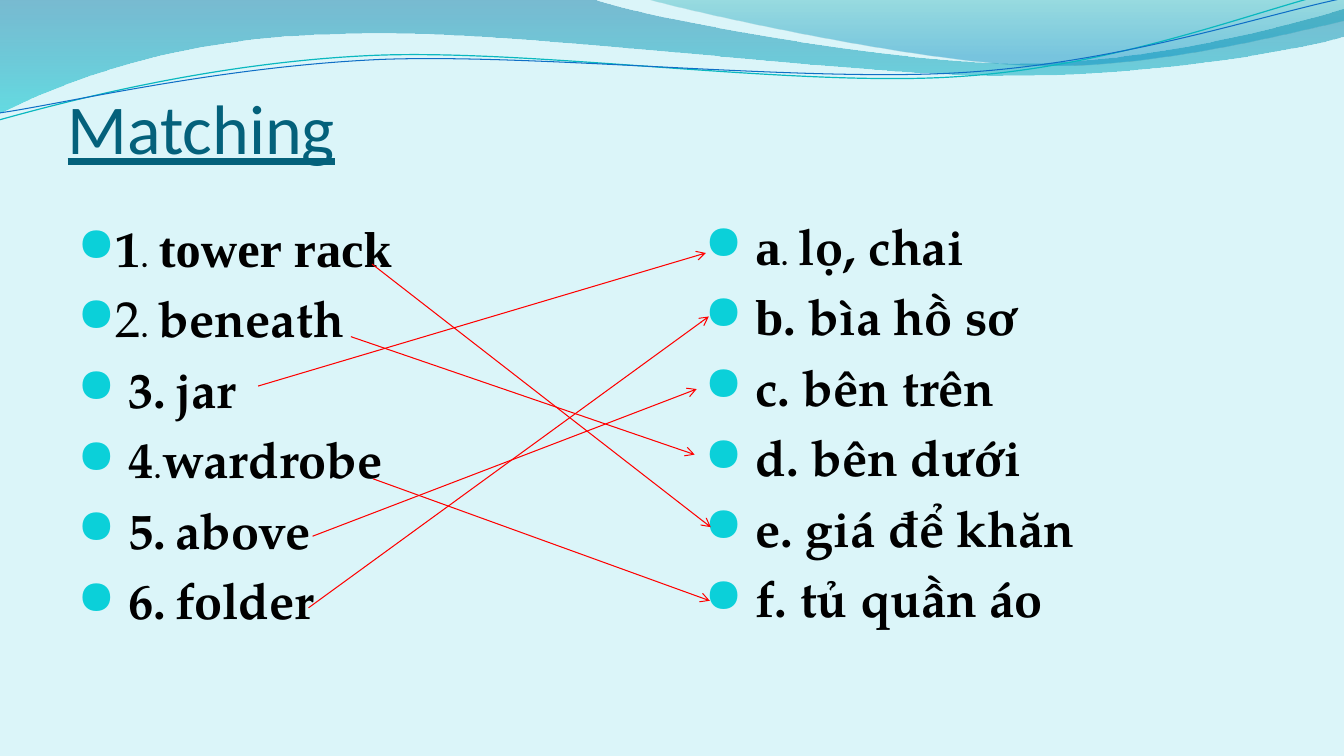
from lxml import etree
from pptx import Presentation
from pptx.dml.color import RGBColor
from pptx.enum.shapes import MSO_CONNECTOR
from pptx.enum.text import MSO_ANCHOR
from pptx.oxml.ns import qn
from pptx.util import Inches, Pt

STRAIGHT = MSO_CONNECTOR.STRAIGHT
TOP, BOTTOM = MSO_ANCHOR.TOP, MSO_ANCHOR.BOTTOM
COLORS = {
    "background": "DBF5F9", "title": "04617B", "text": "000000",
    "bullet": "0BD0D9", "arrow": "FF0000",
    "teal line": "0AB8BF", "blue line": "0F6FC6",
    "deep blue": "0074A1", "cyan": "00C6CF",
    "green": "00A1A9", "sky": "008BBF",
}
RGB = {name: RGBColor.from_string(value) for name, value in COLORS.items()}
PAGELLA, TIMES = "TeX Gyre Pagella", "Times New Roman"

presentation = Presentation()
presentation.slide_width = Inches(13.33)
presentation.slide_height = Inches(7.5)
slide = presentation.slides.add_slide(presentation.slide_layouts[6])
slide.background.fill.solid()
slide.background.fill.fore_color.rgb = RGB["background"]


def add_text(paragraphs, left, top, width, height, *, color, anchor=TOP,
             inset=0.1, bottom_inset=0.05, space_before=0, underline=None, bullet=None):
    """Each paragraph is a list of runs: (text, size, font, bold)."""
    shape = slide.shapes.add_textbox(*map(Inches, (left, top, width, height)))
    frame = shape.text_frame
    frame.word_wrap = True
    frame.vertical_anchor = anchor
    frame.margin_left = frame.margin_right = Inches(inset)
    frame.margin_top = Inches(0.05)
    frame.margin_bottom = Inches(bottom_inset)
    for index, runs in enumerate(paragraphs):
        paragraph = frame.add_paragraph() if index else frame.paragraphs[0]
        paragraph.space_before = Pt(space_before)
        for text, size, font, bold in runs:
            run = paragraph.add_run()
            run.text = text
            run.font.size = Pt(size)
            run.font.name = font
            run.font.bold = bold
            run.font.underline = underline
            run.font.color.rgb = color
        if bullet:
            properties = paragraph._p.get_or_add_pPr()
            properties.set("marL", str(Inches(0.3)))
            properties.set("indent", str(-Inches(0.3)))
            bullet_color = etree.SubElement(properties, qn("a:buClr"))
            etree.SubElement(bullet_color, qn("a:srgbClr"), val=bullet)
            etree.SubElement(properties, qn("a:buSzPct"), val="95000")
            etree.SubElement(properties, qn("a:buFont"), typeface="OpenSymbol")
            etree.SubElement(properties, qn("a:buChar"), char="●")


def add_wave(start, segments, closed):
    """Segments hold one end point, or two Bézier control points and an end."""
    points = [(Inches(x), Inches(y)) for segment in segments
              for x, y in zip(segment[::2], segment[1::2])]
    builder = slide.shapes.build_freeform(*map(Inches, start))
    builder.add_line_segments(points, close=closed)
    shape = builder.convert_to_shape()
    shape.shadow.inherit = False
    # Join the three points of each Bézier segment into one curve
    steps = iter(list(shape._element.iter(qn("a:lnTo"))))
    for segment in segments:
        first = next(steps)
        if len(segment) == 6:
            first.tag  # the first step becomes the curve's place
            curve = etree.Element(qn("a:cubicBezTo"))
            first.addprevious(curve)
            for step in (first, next(steps), next(steps)):
                curve.append(step[0])
                step.getparent().remove(step)
    return shape


# Translucent gradient waves: stops are (position, colour, opacity in percent)
filled_waves = [
    ((0, 0),
     [(5.87, -0.01), (6.34, 0.17, 8.85, 0.63, 10.11, 0.63),
      (11.38, 0.63, 12.78, 0.26, 13.33, 0.09), (13.35, 0.36),
      (13.11, 0.44, 11.6, 0.76, 9.94, 0.75), (8.29, 0.75, 5.09, 0.28, 3.43, 0.34),
      (1.72, 0.36, 0.61, 0.83, -0.01, 1.13)],
     [(0, "deep blue", 45), (1, "cyan", 55)]),
    ((6.39, -0.01),
     [(6.79, 0.11, 9.09, 0.62, 10.25, 0.65),
      (11.41, 0.69, 12.82, 0.32, 13.33, 0.21), (13.33, 0)],
     [(0, "green", 30), (0.8, "sky", 45)]),
]
for start, segments, stops in filled_waves:
    wave = add_wave(start, segments, True)
    wave.line.fill.background()
    wave.fill.gradient()
    wave.fill.gradient_angle = 270
    for gradient_stop, (position, color, _) in zip(wave.fill.gradient_stops, stops):
        gradient_stop.position = position
        gradient_stop.color.rgb = RGB[color]
    stop_colors = wave._element.spPr.iter(qn("a:srgbClr"))
    for stop_color, (_, _, opacity) in zip(list(stop_colors), stops):
        etree.SubElement(stop_color, qn("a:alpha"), val=str(opacity * 1000))

# Thin wave lines
line_waves = [
    ((-0.01, 1.19),
     [(0.64, 1.01, 2.11, 0.62, 3.69, 0.55), (5.27, 0.48, 7.9, 0.87, 9.5, 0.76),
      (11.1, 0.66, 12.52, 0.08, 13.31, -0.1)], "teal line", 0.85),
    ((0, 1.12),
     [(0.63, 1.03, 2.18, 0.66, 3.78, 0.59), (5.37, 0.53, 7.96, 0.82, 9.55, 0.72),
      (11.15, 0.62, 12.55, 0.14, 13.34, -0.02)], "blue line", 0.75),
]
for start, segments, color, width in line_waves:
    wave = add_wave(start, segments, False)
    wave.fill.background()
    wave.line.color.rgb = RGB[color]
    wave.line.width = Pt(width)

# Title
add_text([[("Matching", 50, "Calibri", False)]], 0.67, 0.42, 12, 1.25,
         color=RGB["title"], anchor=BOTTOM, inset=0, bottom_inset=0, underline=True)

# Word lists: number, separator, word
words = [
    [("1", 36, PAGELLA, True), (". ", 26, PAGELLA, False), ("tower rack", 36, TIMES, True)],
    [("2", 36, PAGELLA, False), (". ", 26, PAGELLA, False), ("beneath", 36, PAGELLA, True)],
]
for number, separator, word in [(" 3.", " ", "jar"), (" 4", ".", "wardrobe"),
                                (" 5.", " ", "above"), (" 6.", " ", "folder")]:
    words.append([(number, 36, PAGELLA, True), (separator, 26, PAGELLA, word == "jar"),
                  (word, 36, PAGELLA, True)])
meanings = [
    [(" a", 36, TIMES, True), (". ", 26, PAGELLA, False), ("lọ, chai", 36, PAGELLA, True)],
    [(" ", 36, PAGELLA, True), ("b", 36, TIMES, True), (". bìa hồ sơ", 36, PAGELLA, True)],
]
for meaning in [" c. bên trên", " d. bên dưới", " e. giá để khăn", " f. tủ quần áo"]:
    meanings.append([(meaning, 36, PAGELLA, True)])
for paragraphs, left, top in [(words, 0.67, 2.1), (meanings, 6.89, 2.08)]:
    add_text(paragraphs, left, top, 5.89, 4.85, color=RGB["text"],
             space_before=7.2, bullet=COLORS["bullet"])

# Arrows from each word to its meaning
matches = [
    (3.69, 2.62, 7.05, 5.23), (3.48, 3.34, 6.89, 4.51), (2.56, 3.83, 7, 2.51),
    (3.7, 4.75, 7.04, 5.96), (3.1, 5.32, 6.91, 3.86), (3.06, 6.03, 7.03, 3.14),
]
for match in matches:
    arrow = slide.shapes.add_connector(STRAIGHT, *map(Inches, match))
    arrow.line.color.rgb = RGB["arrow"]
    arrow.line.width = Pt(0.75)
    etree.SubElement(arrow.line._get_or_add_ln(), qn("a:tailEnd"), type="arrow")
    etree.SubElement(arrow._element.spPr, qn("a:effectLst"))

presentation.save("out.pptx")
